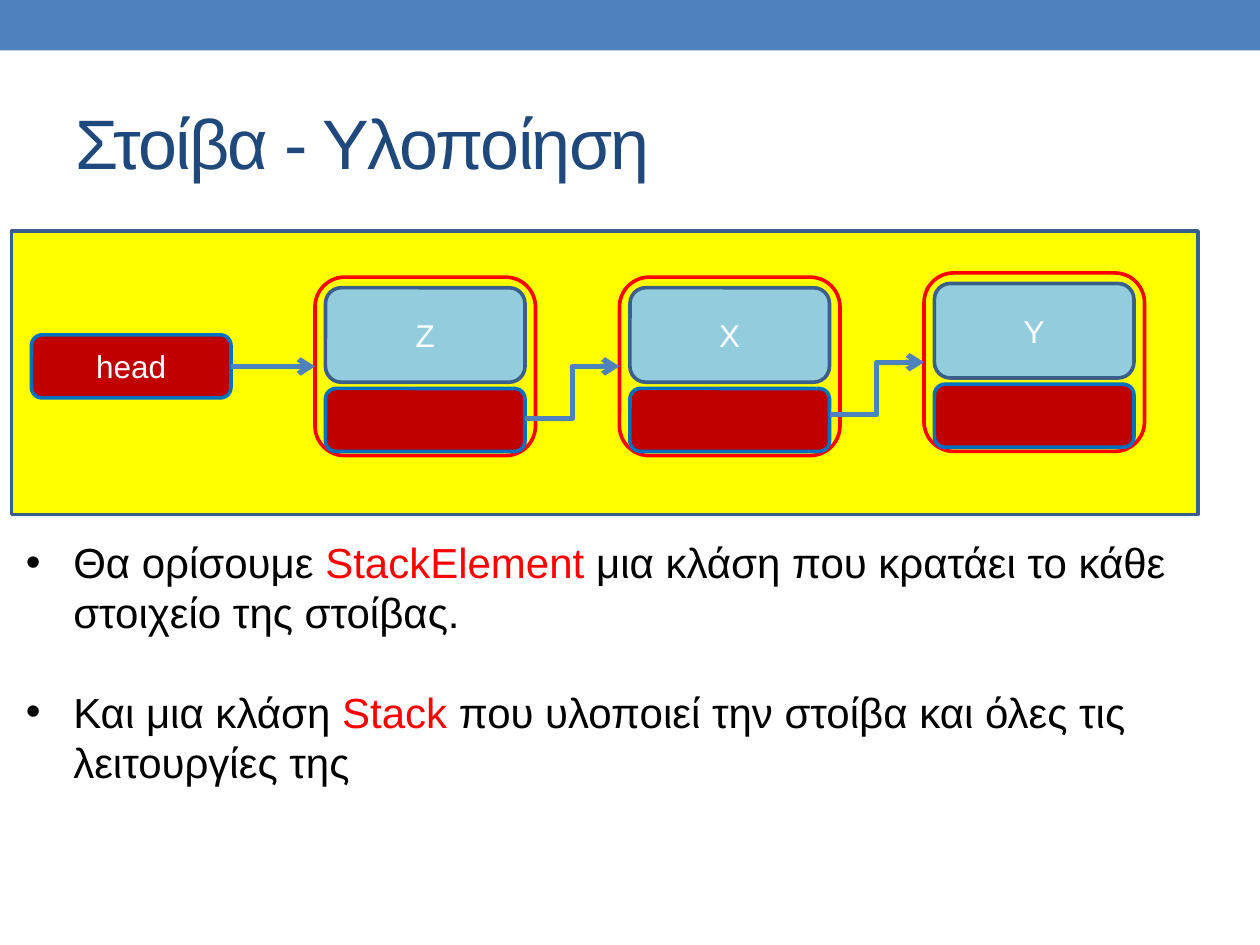
from lxml import etree
from pptx import Presentation
from pptx.dml.color import RGBColor
from pptx.enum import shapes, text
from pptx.oxml import ns
from pptx.util import Inches, Pt

COLS, ROWS = 120, 90
WIDTH, HEIGHT = Inches(10), Inches(7.5)
BLUE, NAVY, EDGE = "4F81BD", "1F497D", "3A5F8C"
RED, DARK_RED, LINK_BLUE = "FF0000", "C00000", "0070C0"
YELLOW, AQUA, WHITE, BLACK = "FFFF00", "93CDDD", "FFFFFF", "000000"
RECT = shapes.MSO_SHAPE.RECTANGLE
ROUND = shapes.MSO_SHAPE.ROUNDED_RECTANGLE


def col(n):
    return round(WIDTH * n / COLS)


def row(n):
    return round(HEIGHT * n / ROWS)


def box(x, y, w, h):
    return col(x), row(y), col(w), row(h)


def color(value):
    return RGBColor.from_string(value)


def add_text(p, content, size=18, fill=BLACK, spacing=None):
    r = p.add_run()
    r.text = content
    r.font.name = "Arial"
    r.font.size = Pt(size)
    r.font.color.rgb = color(fill)
    if spacing is not None:
        r.font._element.set("spc", str(spacing))


def add_box(parent, kind, place, fill=None, line=None, label=None):
    sp = parent.add_shape(kind, *box(*place))
    sp.shadow.inherit = False
    if fill:
        sp.fill.solid()
        sp.fill.fore_color.rgb = color(fill)
    else:
        sp.fill.background()
    if line:
        sp.line.color.rgb = color(line)
        sp.line.width = Pt(2.08)
    else:
        sp.line.fill.background()
    if label:
        tf = sp.text_frame
        tf.vertical_anchor = text.MSO_ANCHOR.MIDDLE
        p = tf.paragraphs[0]
        p.alignment = text.PP_ALIGN.CENTER
        add_text(p, label, fill=WHITE)


def add_arrow(s, kind, x1, y1, x2, y2):
    c = s.shapes.add_connector(kind, col(x1), row(y1), col(x2), row(y2))
    c.line.color.rgb = color(BLUE)
    c.line.width = Pt(3)
    etree.SubElement(c.line._get_or_add_ln(), ns.qn("a:tailEnd"), type="arrow")
    etree.SubElement(c._element.spPr, ns.qn("a:effectLst"))


def add_text_box(s, place, anchor=text.MSO_ANCHOR.TOP):
    tf = s.shapes.add_textbox(*box(*place)).text_frame
    tf.word_wrap = True
    tf.vertical_anchor = anchor
    return tf


def set_bullet(p, indent):
    pPr = p._p.get_or_add_pPr()
    pPr.set("marL", str(indent))
    pPr.set("indent", str(-indent))
    etree.SubElement(pPr, ns.qn("a:buFont"), typeface="Arial")
    etree.SubElement(pPr, ns.qn("a:buChar"), char="•")


def add_node(s, x, y, label):
    group = s.shapes.add_group_shape().shapes
    add_box(group, ROUND, (x, y, 21, 17), line=RED)
    add_box(group, ROUND, (x + 1, y + 10.6, 19, 6), DARK_RED, LINK_BLUE)
    add_box(group, ROUND, (x + 1, y + 1, 19, 9), AQUA, EDGE, label)


def add_linked_list(s):
    add_box(s.shapes, RECT, (1.1, 22, 113, 27), YELLOW, EDGE)
    nodes = [(30, 26.4, "Z"), (59, 26.4, "X"), (88, 26, "Y")]
    for node in nodes:
        add_node(s, *node)

    # Links from each node to the next
    for (x, _, _), (next_x, next_y, _) in zip(nodes, nodes[1:]):
        entry = next_y + 8.5
        add_arrow(s, shapes.MSO_CONNECTOR.ELBOW, x + 20, entry + 5, next_x, entry)

    # Head pointer
    add_box(s.shapes, ROUND, (3, 31.9, 19, 6), DARK_RED, LINK_BLUE, "head")
    add_arrow(s, shapes.MSO_CONNECTOR.STRAIGHT, 22, 34.9, 30, 34.9)


def add_bullets(s, items):
    tf = add_text_box(s, (1.3, 50.5, 119, 25.4))
    for i, runs in enumerate(items):
        p = tf.add_paragraph() if i else tf.paragraphs[0]
        p.space_before = Pt(28 if i else 0)
        set_bullet(p, col(4.5))
        for content, fill in runs:
            add_text(p, content, size=24, fill=fill)


def main():
    prs = Presentation()
    prs.slide_width, prs.slide_height = WIDTH, HEIGHT
    s = prs.slides.add_slide(prs.slide_layouts[6])

    # Top band and title
    add_box(s.shapes, RECT, (0, 0, COLS, 4.8), BLUE)
    title = add_text_box(s, (6, 7, 108, 13), text.MSO_ANCHOR.MIDDLE)
    add_text(title.paragraphs[0], "Στοίβα - Υλοποίηση", size=40, fill=NAVY,
             spacing=-100)

    # Diagram and explanation
    add_linked_list(s)
    add_bullets(s, [
        [("Θα ορίσουμε ", BLACK), ("StackElement ", RED),
         ("μια κλάση που κρατάει το κάθε στοιχείο της στοίβας.", BLACK)],
        [("Και μια κλάση ", BLACK), ("Stack ", RED),
         ("που υλοποιεί την στοίβα και όλες τις λειτουργίες της", BLACK)],
    ])
    prs.save("out.pptx")


main()
